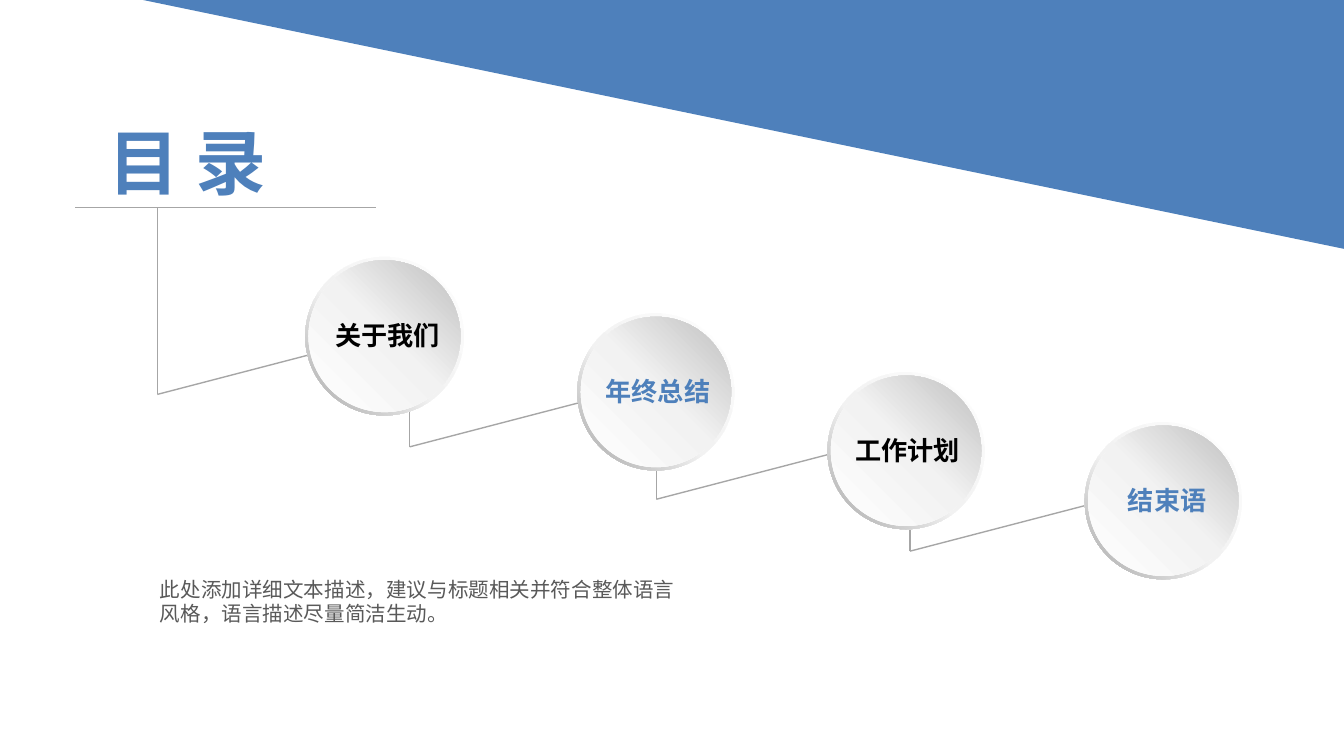
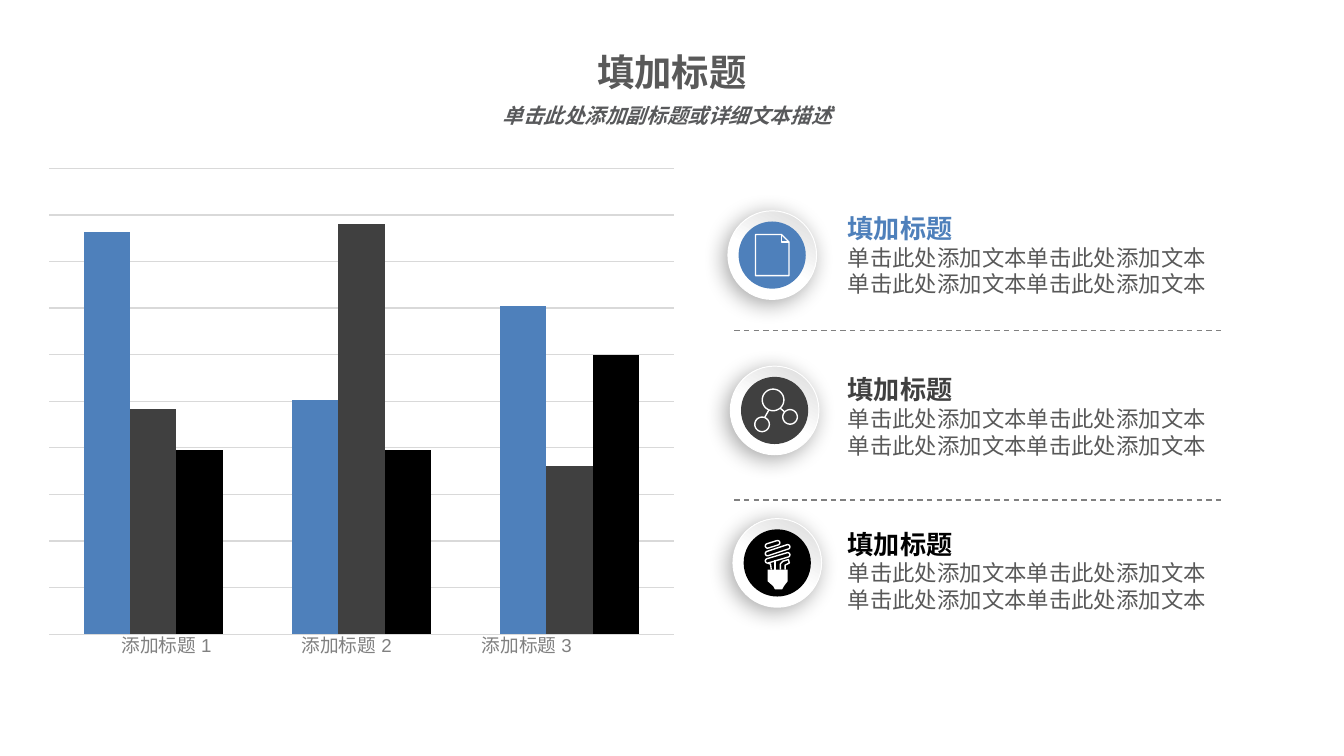
from math import cos, hypot, pi, sin

from lxml import etree
from pptx import Presentation
from pptx.chart.data import CategoryChartData
from pptx.dml.color import RGBColor
from pptx.enum.chart import XL_CHART_TYPE
from pptx.enum.dml import MSO_LINE
from pptx.enum.shapes import MSO_CONNECTOR, MSO_SHAPE
from pptx.enum.text import MSO_AUTO_SIZE, PP_ALIGN
from pptx.oxml.ns import qn
from pptx.util import Pt

BLUE = RGBColor(0x4E, 0x80, 0xBB)
DARK = RGBColor(0x40, 0x40, 0x40)
BLACK = RGBColor(0, 0, 0)
WHITE = RGBColor(0xFF, 0xFF, 0xFF)
BODY = RGBColor(0x59, 0x59, 0x59)
SUB = RGBColor(0x58, 0x59, 0x5B)
GREY = RGBColor(0x80, 0x80, 0x80)
RULE = RGBColor(0xA6, 0xA6, 0xA6)
PALE = RGBColor(0xF2, 0xF2, 0xF2)
MIST = RGBColor(0xBF, 0xBF, 0xBF)
GRID = RGBColor(0xD9, 0xD9, 0xD9)

SANS = "Noto Sans CJK SC"
CENTER, LEFT = PP_ALIGN.CENTER, PP_ALIGN.LEFT
FIT = MSO_AUTO_SIZE.SHAPE_TO_FIT_TEXT
OVAL, DONUT = MSO_SHAPE.OVAL, MSO_SHAPE.DONUT
STRAIGHT = MSO_CONNECTOR.STRAIGHT
DASH = MSO_LINE.DASH
COLUMN = XL_CHART_TYPE.COLUMN_CLUSTERED

NONE = (0, 0)
SNUG = (4.3, 2.2)
WIDE = (7.2, 3.6)

TITLE = dict(size=38, color=BLUE, bold=True)
HEAD = dict(size=20, color=BODY, bold=True)
SUBHEAD = dict(size=11, color=SUB, bold=True, italic=True)
NOTE = dict(size=11, color=BODY)
ITEM = dict(size=14, bold=True)
TEXT = dict(size=12, color=BODY)
LABEL = dict(size=10, color=GREY, name="Arial")


def style(run, form):
    font = run.font
    for key, value in {"name": SANS, **form}.items():
        if key == "color":
            font.fill.solid()
            font.fill.fore_color.rgb = value
        else:
            setattr(font, key, Pt(value) if key == "size" else value)
    east = etree.SubElement(run.font._element, qn("a:ea"))
    east.set("typeface", font.name)


def write(slide, box, lines, inset=WIDE, align=LEFT, wrap=True):
    """Add a text box; lines holds (text, format) pairs, one a paragraph."""
    frame = slide.shapes.add_textbox(*map(Pt, box)).text_frame
    frame.word_wrap, frame.auto_size = wrap, FIT
    frame.margin_left = frame.margin_right = Pt(inset[0])
    frame.margin_top = frame.margin_bottom = Pt(inset[1])
    for i, (text, form) in enumerate(lines):
        para = frame.add_paragraph() if i else frame.paragraphs[0]
        para.alignment = align
        run = para.add_run()
        run.text = text
        style(run, form)


def rule(slide, start, end, color=RULE, dash=None):
    line = slide.shapes.add_connector(STRAIGHT, *map(Pt, start + end))
    line.line.color.rgb, line.line.width = color, Pt(0.75)
    if dash:
        line.line.dash_style = dash
    etree.SubElement(line.element.spPr, qn("a:effectLst"))


def paint(shape, color):
    shape.shadow.inherit = False
    shape.line.fill.background()
    shape.fill.solid()
    shape.fill.fore_color.rgb = color


def blend(shape, stops, angle):
    """Fill with a gradient; angle runs clockwise in degrees."""
    shape.shadow.inherit = False
    shape.line.fill.background()
    shape.fill.gradient()
    shape.fill.gradient_angle = 360 - angle
    marks = shape.element.spPr.find(qn("a:gradFill")).find(qn("a:gsLst"))
    for mark in list(marks):
        marks.remove(mark)
    for place, color in stops:
        mark = etree.SubElement(marks, qn("a:gs"), pos=str(place * 1000))
        etree.SubElement(mark, qn("a:srgbClr"), val=str(color))


def shade(shape):
    effects = shape.element.spPr.find(qn("a:effectLst"))
    cast = etree.SubElement(effects, qn("a:outerShdw"), blurRad=str(Pt(12)),
                            dist=str(Pt(3)), dir=str(135 * 60000),
                            algn="ctr", rotWithShape="0")
    tone = etree.SubElement(cast, qn("a:srgbClr"), val=str(BLACK))
    etree.SubElement(tone, qn("a:alpha"), val="34000")


def disc(shapes, kind, mid, size):
    x, y = mid
    return shapes.add_shape(kind, Pt(x - size / 2), Pt(y - size / 2),
                            Pt(size), Pt(size))


def trace(shapes, paths, mid=(0, 0)):
    """Build one outline from (points, closed) paths placed around mid."""
    pen = None
    for points, closed in paths:
        spots = [(Pt(mid[0] + x), Pt(mid[1] + y)) for x, y in points]
        if pen is None:
            pen = shapes.build_freeform(*spots[0])
        else:
            pen.move_to(*spots[0])
        pen.add_line_segments(spots[1:], close=closed)
    return pen.convert_to_shape()


def sketch(shapes, paths, mid):
    shape = trace(shapes, paths, mid)
    paint(shape, WHITE)
    shape.fill.background()
    shape.line.color.rgb, shape.line.width = WHITE, Pt(0.75)


def ring(x, y, r):
    turns = [2 * pi * i / 36 for i in range(36)]
    return [(x + r * cos(t), y + r * sin(t)) for t in turns], True


def coil(x1, y1, x2, y2, r=1.2):
    """Outline of a slanted bar with round ends."""
    span = hypot(x2 - x1, y2 - y1)
    ux, uy = (x2 - x1) / span, (y2 - y1) / span
    points = []
    for x, y, side in ((x2, y2, 1), (x1, y1, -1)):
        for i in range(9):
            t = pi * i / 8 - pi / 2
            a, b = side * r * cos(t), side * r * sin(t)
            points.append((x + a * ux - b * uy, y + a * uy + b * ux))
    return points, True


def page(shapes, mid):
    sketch(shapes, [
        ([(-9, -11), (5, -11), (9, -7), (9, 11), (-9, 11)], True),
        ([(5, -11), (5, -7), (9, -7)], False)], mid)


def nodes(shapes, mid):
    sketch(shapes, [
        ring(-0.8, -5.6, 5.8), ring(8.3, 3.5, 3.9), ring(-6.7, 7.5, 3.9),
        ([(-3, -0.3), (-5.3, 3.8)], False),
        ([(3, -1.2), (5.4, 0.8)], False)], mid)


def bulb(shapes, mid):
    sketch(shapes, [
        coil(-5.2, -9.1, 0.2, -10.8), coil(-5.2, -5, 5.6, -8.6),
        coil(-5.2, -1.1, 5.6, -4.3),
        ([(-5, 0.2), (-3.6, 0.6), (-3.2, 3.6)], False),
        ([(-1.2, -1.8), (-1.2, 3.6)], False),
        ([(1.7, 3.6), (1.7, 0.5), (3, -0.9), (6, -1.8), (6.5, 0),
          (4.2, 1.2), (4.2, 3.6)], False)], mid)
    base = [(-5.2, 3.6), (5.6, 3.6), (5.6, 9.8), (3.6, 12.4), (2.6, 14.2),
            (-1.2, 14.2), (-2.2, 12.4), (-5.2, 9.8)]
    paint(trace(shapes, [(base, True)], mid), WHITE)


def ball(slide, mid, size):
    shapes = slide.shapes.add_group_shape().shapes
    rim = disc(shapes, DONUT, mid, size)
    rim.adjustments[0] = 0.05
    blend(rim, [(0, WHITE), (55, PALE), (100, RULE)], 135)
    face = disc(shapes, OVAL, mid, size - 3.6)
    blend(face, [(0, WHITE), (51, PALE), (100, MIST)], 315)


def badge(slide, mid, color, icon):
    shapes = slide.shapes.add_group_shape().shapes
    rim = disc(shapes, OVAL, mid, 47.5)
    blend(rim, [(45, WHITE), (100, GRID)], 300)
    rim.line.color.rgb, rim.line.width = WHITE, Pt(0.5)
    shade(rim)
    paint(disc(shapes, OVAL, mid, 36), color)
    icon(shapes, mid)


def plot(slide):
    data = CategoryChartData()
    data.categories = ["1", "2", "3"]
    rows = [((98, 57, 80), BLUE), ((55, 100, 41), DARK), ((45, 45, 68), BLACK)]
    for i, (values, _) in enumerate(rows, 1):
        data.add_series(f"Series {i}", values)
    box = map(Pt, (19.4, 85, 348.5, 260))
    chart = slide.shapes.add_chart(COLUMN, *box, data).chart
    chart.has_legend = chart.has_title = False
    chart.font.name, chart.font.size = "Calibri", Pt(10)
    chart.font.color.rgb = BLACK
    bars = chart.plots[0]
    bars.gap_width, bars.overlap, bars.vary_by_categories = 150, 0, False
    for series, (_, color) in zip(bars.series, rows):
        series.format.fill.solid()
        series.format.fill.fore_color.rgb = color
    axis = chart.value_axis
    axis.minimum_scale, axis.maximum_scale = 0, 113.6
    axis.major_unit = 11.36
    axis.has_major_gridlines = True
    grid = axis.major_gridlines.format.line
    grid.color.rgb, grid.width = GRID, Pt(0.75)
    axis.visible = chart.category_axis.visible = False


def agenda(slide):
    write(slide, (54, 61.2, 149.8, 50.4), [("目 录", TITLE)], SNUG)
    rule(slide, (40.3, 111.2), (201.5, 111.2))
    steps = [(84.3, 111.6, 211.3), (219.5, 219.6, 239.4),
             (351.6, 247.7, 267.5), (487.5, 275.8, 295.3)]
    for x, top, foot in steps:
        rule(slide, (x, top), (x, foot))
        rule(slide, (x, foot), (x + 110.6, foot - 28.8))
    write(slide, (81.4, 306.7, 295.2, 31.7),
          [("此处添加详细文本描述，建议与标题相关并符合整体语言风格，"
            "语言描述尽量简洁生动。", NOTE)], SNUG)
    band = [(76.7, 0), (720, 0), (720, 133.3)]
    paint(trace(slide.shapes, [(band, True)]), BLUE)
    topics = [("关于我们", BLACK, (206, 180.1), 85, 163.4),
              ("年终总结", BLUE, (351.4, 210), 84.2, 308.2),
              ("工作计划", BLACK, (485.4, 241.5), 84.2, 442.1),
              ("结束语", BLUE, (623.2, 268.3), 84.2, 581)]
    for text, color, mid, size, left in topics:
        ball(slide, mid, size)
        write(slide, (left, mid[1] - 8.9, 88.6, 17.3),
              [(text, dict(ITEM, color=color))], NONE, CENTER)


def report(slide):
    write(slide, (280.8, 26.6, 158.4, 24.5), [("填加标题", HEAD)], NONE, CENTER)
    write(slide, (261.4, 51.8, 192.2, 20.9),
          [("单击此处添加副标题或详细文本描述", SUBHEAD)],
          align=CENTER, wrap=False)
    plot(slide)
    for i in range(3):
        write(slide, (54.7 + 96.5 * i, 336.2, 69.1, 19.4),
              [(f"添加标题 {i + 1}", LABEL)], align=CENTER)
    for y in (177.1, 267.8):
        rule(slide, (393.4, y), (654.5, y), GREY, DASH)
    items = [(110.2, (413.7, 136.7), BLUE, page),
             (196.6, (415, 219.9), DARK, nodes),
             (279.4, (416.4, 301.6), BLACK, bulb)]
    for top, mid, color, icon in items:
        body = [("单击此处添加文本单击此处添加文本", TEXT)] * 2
        write(slide, (447.1, top, 218.9, 53.3),
              [("填加标题", dict(ITEM, color=color))] + body)
        badge(slide, mid, color, icon)


def main():
    deck = Presentation()
    deck.slide_width, deck.slide_height = Pt(720), Pt(405)
    for fill in (agenda, report):
        fill(deck.slides.add_slide(deck.slide_layouts[6]))
    deck.save("out.pptx")


if __name__ == "__main__":
    main()
